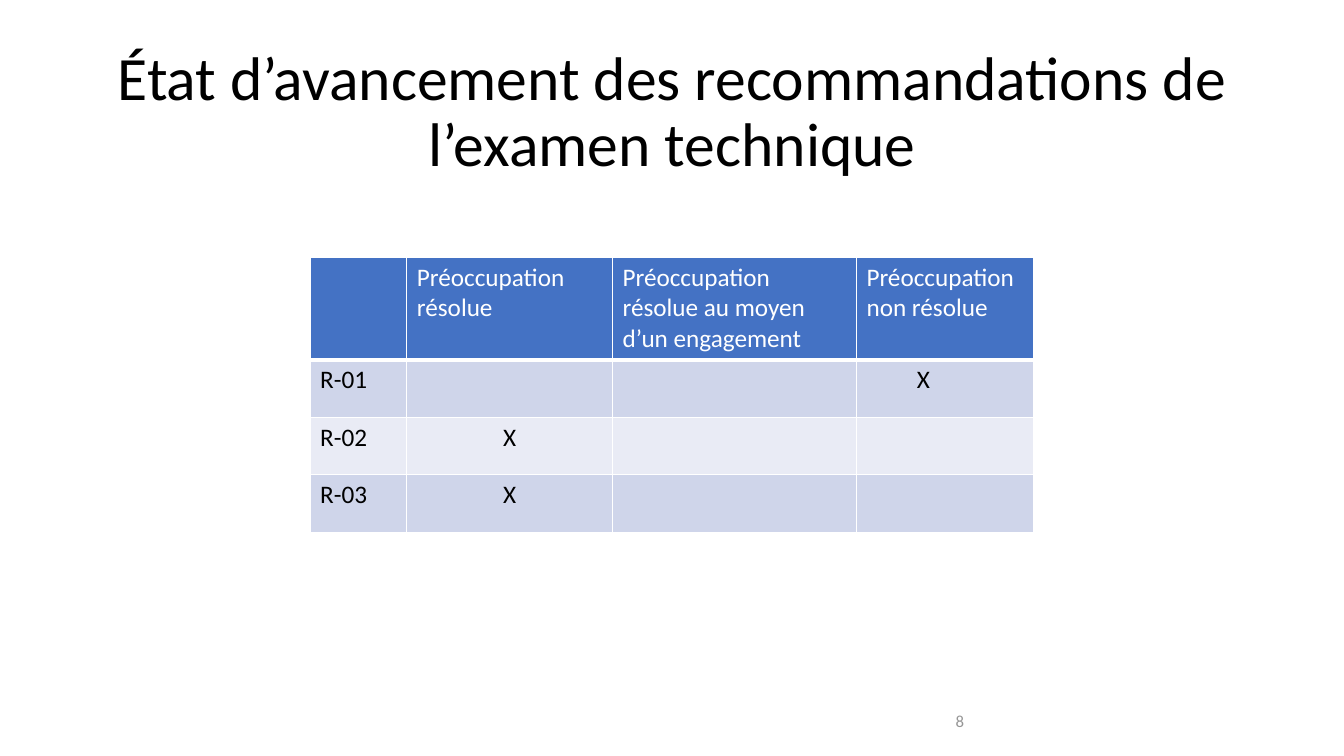
from lxml.etree import SubElement
from pptx import Presentation
from pptx.dml.color import RGBColor
from pptx.enum.text import MSO_ANCHOR, MSO_AUTO_SIZE, PP_ALIGN
from pptx.oxml.ns import qn
from pptx.util import Inches, Pt

TITLE = "État d’avancement des recommandations de l’examen technique"
PAGE_NUMBER = "8"
ROWS = [
    ["", "Préoccupation résolue", "Préoccupation résolue au moyen d’un engagement", "Préoccupation non résolue"],
    ["R-01", "", "", "X"],
    ["R-02", "X", "", ""],
    ["R-03", "X", "", ""],
]
COLUMN_WIDTHS = [0.96, 2.04, 2.42, 1.76]
HEADER_HEIGHT, ROW_HEIGHT = 1.02, 0.57
TABLE_TOP = 2.55
PAGE_WIDTH, PAGE_HEIGHT = 13.33, 7.5
HEADER_FILL, BAND_FILLS = "4472C4", ["E9EBF5", "CFD5EA"]
WHITE, BLACK, GREY = "FFFFFF", "000000", "969696"
LAST_MARK_INDENT = 0.6


def color(value):
    return RGBColor.from_string(value)


def write(frame, text, size, ink, **formats):
    para = frame.paragraphs[0]
    for name, value in formats.items():
        setattr(para, name, value)
    span = para.add_run()
    span.text = text
    span.font.color.rgb = color(ink)
    for name, value in {"name": "Calibri", "size": Pt(size), "bold": False}.items():
        setattr(span.font, name, value)


def place(box, left, top, width, height):
    for name, value in {"left": left, "top": top, "width": width, "height": height}.items():
        setattr(box, name, Inches(value))


def add_borders(cell, is_header):
    properties = cell._tc.get_or_add_tcPr()
    for edge in ("lnL", "lnR", "lnT", "lnB"):
        width = Pt(3 if is_header and edge == "lnB" else 1)
        line = SubElement(properties, qn(f"a:{edge}"), w=str(width))
        fill = SubElement(line, qn("a:solidFill"))
        SubElement(fill, qn("a:srgbClr"), val=WHITE)


def add_title(page):
    title = page.shapes.title
    place(title, 0.92, 0.4, 11.5, 1.45)
    frame = title.text_frame
    for name, value in {"word_wrap": True, "auto_size": MSO_AUTO_SIZE.NONE,
                        "vertical_anchor": MSO_ANCHOR.MIDDLE}.items():
        setattr(frame, name, value)
    write(frame, TITLE, 44, BLACK, alignment=PP_ALIGN.CENTER, line_spacing=0.9)


def add_status_table(page):
    width = sum(COLUMN_WIDTHS)
    heights = [HEADER_HEIGHT] + [ROW_HEIGHT] * (len(ROWS) - 1)
    table = page.shapes.add_table(
        len(ROWS), len(COLUMN_WIDTHS), Inches((PAGE_WIDTH - width) / 2),
        Inches(TABLE_TOP), Inches(width), Inches(sum(heights))).table
    for column, size in zip(table.columns, COLUMN_WIDTHS):
        column.width = Inches(size)
    for row, size in zip(table.rows, heights):
        row.height = Inches(size)
    for r, texts in enumerate(ROWS):
        for c, text in enumerate(texts):
            cell = table.cell(r, c)
            add_borders(cell, r == 0)
            cell.fill.solid()
            cell.fill.fore_color.rgb = color(BAND_FILLS[r % 2] if r else HEADER_FILL)
            if not text:
                continue
            is_last_mark = text == "X" and c == len(texts) - 1
            if is_last_mark:
                cell.margin_left = Inches(LAST_MARK_INDENT)
            centred = text == "X" and not is_last_mark
            write(cell.text_frame, text, 18, BLACK if r else WHITE,
                  alignment=PP_ALIGN.CENTER if centred else PP_ALIGN.LEFT)


def add_page_number(page):
    box = page.shapes.add_textbox(Inches(8.83), Inches(7), Inches(0.83), Inches(0.33))
    box.text_frame.word_wrap = True
    box.text_frame.vertical_anchor = MSO_ANCHOR.MIDDLE
    write(box.text_frame, PAGE_NUMBER, 12, GREY, alignment=PP_ALIGN.RIGHT, line_spacing=0.9)


def main():
    deck = Presentation()
    deck.slide_width, deck.slide_height = Inches(PAGE_WIDTH), Inches(PAGE_HEIGHT)
    page = deck.slides.add_slide(deck.slide_layouts[5])
    add_title(page)
    add_page_number(page)
    add_status_table(page)
    deck.save("out.pptx")


if __name__ == "__main__":
    main()
